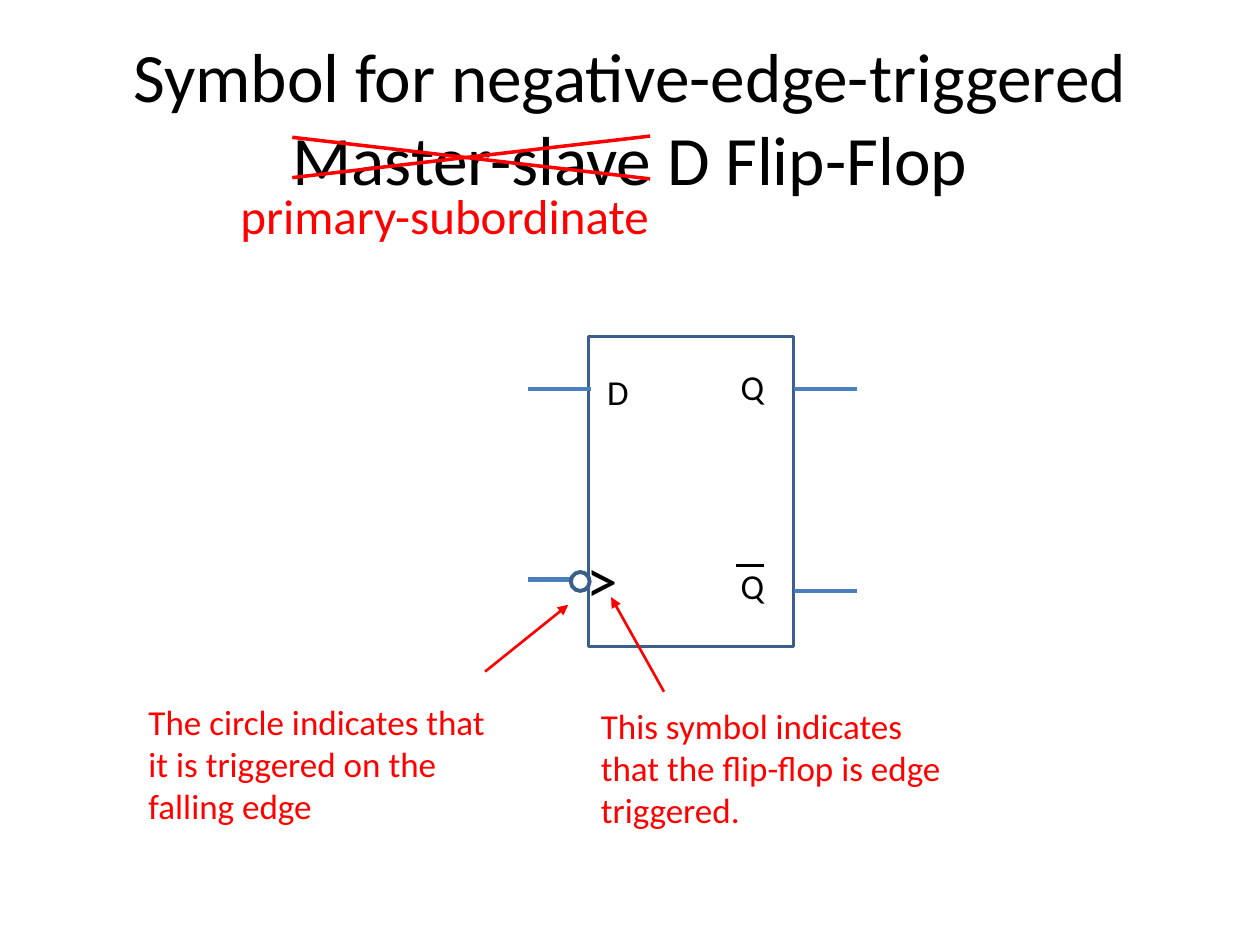
"""Build a slide that explains the symbol of a negative-edge-triggered flip-flop."""
import pptx
import pptx.dml.color
import pptx.enum.shapes
import pptx.enum.text
import pptx.oxml.ns
import pptx.util
import lxml.etree

COLUMNS, ROWS = 100, 75
WIDTH, HEIGHT = pptx.util.Inches(10), pptx.util.Inches(7.5)
FONT = "Calibri"
COLORS = {
    "text": "000000",
    "paper": "FFFFFF",
    "outline": "3A5F8C",
    "wire": "4B7EBC",
    "note": "FF0000",
}


def color(name):
    """Return the named colour."""
    return pptx.dml.color.RGBColor.from_string(COLORS[name])


def grid(column, row):
    """Turn a grid position into slide lengths."""
    return round(WIDTH * column / COLUMNS), round(HEIGHT * row / ROWS)


def write(frame, text, size, ink):
    """Write one run of text into a frame and return its paragraph."""
    frame.word_wrap = True
    para = frame.paragraphs[0]
    span = para.add_run()
    span.text = text
    span.font.name = FONT
    span.font.size = pptx.util.Pt(size)
    span.font.color.rgb = color(ink)
    return para


def add_title(page, text):
    """Place and fill the title placeholder."""
    title = page.shapes.title
    title.left, title.top = grid(5, 3)
    title.width, title.height = grid(90, 12.5)
    title.text_frame.vertical_anchor = pptx.enum.text.MSO_ANCHOR.MIDDLE
    para = write(title.text_frame, text, 39.6, "text")
    para.alignment = pptx.enum.text.PP_ALIGN.CENTER


def add_text(shapes, place, extent, text, size=20, ink="text"):
    """Add a text box that grows with its text."""
    box = shapes.add_textbox(*grid(*place), *grid(*extent))
    box.text_frame.auto_size = pptx.enum.text.MSO_AUTO_SIZE.SHAPE_TO_FIT_TEXT
    write(box.text_frame, text, size, ink)
    return box


def add_shape(shapes, kind, place, extent, weight):
    """Add a white outlined shape."""
    shape = shapes.add_shape(kind, *grid(*place), *grid(*extent))
    shape.shadow.inherit = False
    shape.fill.solid()
    shape.fill.fore_color.rgb = color("paper")
    shape.line.color.rgb = color("outline")
    shape.line.width = pptx.util.Pt(weight)


def add_line(shapes, start, end, ink, weight, arrow=False):
    """Add a straight line, with an arrowhead at its end if asked."""
    straight = pptx.enum.shapes.MSO_CONNECTOR.STRAIGHT
    line = shapes.add_connector(straight, *grid(*start), *grid(*end))
    line.line.color.rgb = color(ink)
    line.line.width = pptx.util.Pt(weight)
    name = pptx.oxml.ns.qn
    if arrow:
        outline = line.line._get_or_add_ln()
        lxml.etree.SubElement(outline, name("a:tailEnd"), type="triangle")
    lxml.etree.SubElement(line._element.spPr, name("a:effectLst"))


def add_symbol(page):
    """Draw the flip-flop with its pins as one group."""
    shapes = page.shapes.add_group_shape().shapes
    kinds = pptx.enum.shapes.MSO_SHAPE
    add_shape(shapes, kinds.RECTANGLE, (46.7, 26.7), (16.3, 24.6), 2)
    add_text(shapes, (47.2, 28.9), (4.4, 4.2), "D")
    add_text(shapes, (45.6, 42.4), (7.9, 7.1), ">", 36)
    for row in (28.5, 44.3):
        add_text(shapes, (57.8, row), (4.4, 4.2), "Q")
    add_line(shapes, (58.4, 44.9), (60.6, 44.9), "text", 2)
    pins = ((63, 30.9), (63, 46.9), (41.9, 30.9), (41.9, 46))
    for column, row in pins:
        stub = column if column == 63 else 44.1
        add_line(shapes, (stub, row), (stub + 2.6, row), "wire", 0.75)
    for column, row in pins:
        add_line(shapes, (column, row), (column + 5, row), "wire", 2.5)
    add_shape(shapes, kinds.OVAL, (45.3, 45.4), (1.5, 1.5), 2.25)


def add_correction(page):
    """Cross out the old term and write the new one below it."""
    shapes = page.shapes.add_group_shape().shapes
    for start, end in ((14.1, 10.8), (10.9, 14.2)):
        add_line(shapes, (23.2, start), (51.6, end), "note", 2)
    box = add_text(page.shapes, (18.1, 14.2), (35.4, 5.8),
                   "primary-subordinate", 28, "note")
    box.text_frame.auto_size = pptx.enum.text.MSO_AUTO_SIZE.NONE
    box.text_frame.paragraphs[0].space_before = pptx.util.Pt(5.6)


def main():
    """Build and save the deck."""
    deck = pptx.Presentation()
    deck.slide_width, deck.slide_height = WIDTH, HEIGHT
    page = deck.slides.add_slide(deck.slide_layouts.get_by_name("Title Only"))
    add_title(page, "Symbol for negative-edge-triggered Master-slave D Flip-Flop")
    add_symbol(page)
    notes = (
        ((10.8, 55.1), "The circle indicates that it is triggered on the falling edge",
         (38.5, 53.3), (45.1, 48)),
        ((46.7, 55.4), "This symbol indicates that the flip-flop is edge triggered.",
         (52.7, 54.9), (48.5, 47.4)),
    )
    for place, text, start, end in notes:
        add_line(page.shapes, start, end, "note", 1.5, arrow=True)
        add_text(page.shapes, place, (29.2, 11.1), text, ink="note")
    add_correction(page)
    deck.save("out.pptx")


if __name__ == "__main__":
    main()
